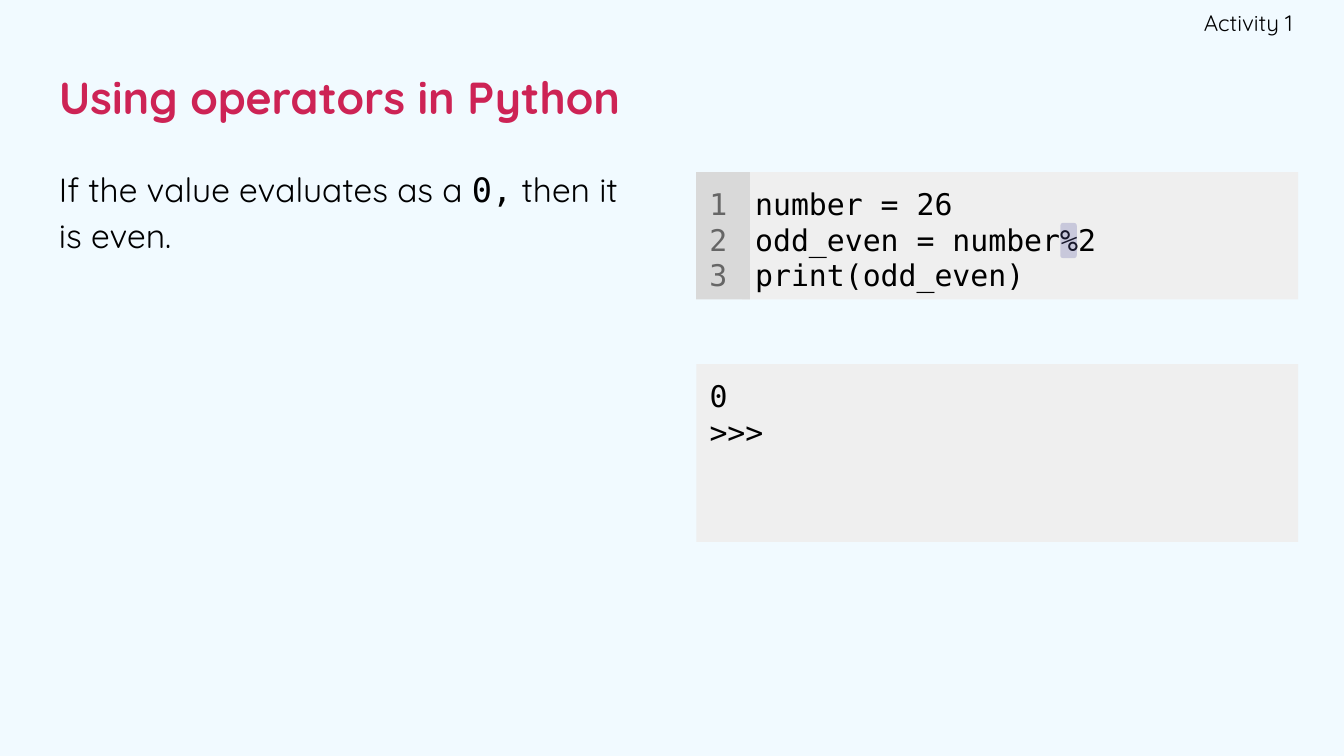
from lxml.etree import SubElement
from pptx import Presentation
from pptx.dml.color import RGBColor
from pptx.enum.shapes import MSO_SHAPE
from pptx.enum.text import MSO_ANCHOR, PP_ALIGN
from pptx.oxml.ns import qn
from pptx.util import Pt

PALE_BLUE = RGBColor(0xF1, 0xFA, 0xFF)
CRIMSON = RGBColor(0xCD, 0x23, 0x55)
BLACK = RGBColor(0x00, 0x00, 0x00)
PANEL_GREY = RGBColor(0xEF, 0xEF, 0xEF)
GUTTER_GREY = RGBColor(0xD9, 0xD9, 0xD9)
NUMBER_GREY = RGBColor(0x66, 0x66, 0x66)
VIOLET = RGBColor(0x5B, 0x5B, 0xA5)

PROSE_FONT = "Quicksand"
CODE_FONT = "DejaVu Sans Mono"
INSET = 7.2
MARGIN = 24.5
CODE_LEFT = 373
CODE_WIDTH = 322.5


def style_run(run, font_name, size, color, bold=False):
    """Set the font of one run."""
    run.font.name = font_name
    run.font.size = Pt(size)
    run.font.color.rgb = color
    run.font.bold = bold


def set_frame(frame, anchor=MSO_ANCHOR.TOP, right_inset=INSET):
    """Wrap a text frame and set its insets and anchor."""
    frame.word_wrap = True
    frame.vertical_anchor = anchor
    frame.margin_left = frame.margin_top = frame.margin_bottom = Pt(INSET)
    frame.margin_right = Pt(right_inset)


def add_prose(slide, box, pieces, size, color=BLACK, bold=False,
              anchor=MSO_ANCHOR.TOP, align=PP_ALIGN.LEFT, right_inset=INSET):
    """Add one paragraph made of (text, font) pieces and return it."""
    frame = slide.shapes.add_textbox(*map(Pt, box)).text_frame
    set_frame(frame, anchor, right_inset)
    paragraph = frame.paragraphs[0]
    paragraph.alignment = align
    for text, font_name in pieces:
        run = paragraph.add_run()
        run.text = text
        style_run(run, font_name, size, color, bold)
    return paragraph


def add_block(slide, box, fill, preset=MSO_SHAPE.RECTANGLE):
    """Add a plain filled shape without line or shadow."""
    block = slide.shapes.add_shape(preset, *map(Pt, box))
    block.shadow.inherit = False
    block.fill.solid()
    block.fill.fore_color.rgb = fill
    block.line.fill.background()
    return block


def add_code_panel(slide, box, lines, fill=PANEL_GREY, color=BLACK):
    """Add a panel of monospaced lines."""
    frame = add_block(slide, box, fill).text_frame
    set_frame(frame)
    frame.text = "\n".join(lines)
    for paragraph in frame.paragraphs:
        paragraph.alignment = PP_ALIGN.LEFT
        for run in paragraph.runs:
            style_run(run, CODE_FONT, 16, color)


def add_highlight(slide, box):
    """Add a translucent rounded marker."""
    marker = add_block(slide, box, VIOLET, MSO_SHAPE.ROUNDED_RECTANGLE)
    marker.adjustments[0] = 0.17
    tint = marker.fill._xPr.find(qn("a:solidFill"))[0]
    SubElement(tint, qn("a:alpha"), val="26000")


def add_listing(slide, box, lines):
    """Add code lines with a gutter of line numbers and mark the operator."""
    left, top, width, height = box
    gutter_width, code_offset = 28.8, 24.5
    add_code_panel(slide, (left + code_offset, top, width - code_offset, height), lines)
    numbers = [str(number) for number in range(1, len(lines) + 1)]
    add_code_panel(slide, (left, top, gutter_width, height), numbers,
                   GUTTER_GREY, NUMBER_GREY)
    add_highlight(slide, (left + 195.1, top + 27.2, 8.8, 18.9))


def add_header(slide, box):
    """Add the activity label and the title below it."""
    left, top, width, height = box
    label_height = 24.5
    add_prose(slide, (left, top + label_height, width, height - label_height),
              [("Using operators in Python", PROSE_FONT)], 24, CRIMSON, True,
              MSO_ANCHOR.MIDDLE)
    add_prose(slide, (left + 514, top, 154, label_height),
              [("Activity 1", PROSE_FONT)], 12, anchor=MSO_ANCHOR.MIDDLE,
              align=PP_ALIGN.RIGHT, right_inset=0)


def add_explanation(slide, box):
    """Add the explanatory sentence."""
    sentence = add_prose(slide, box, [("If the value evaluates as a ", PROSE_FONT),
                                      ("0,", CODE_FONT),
                                      (" then it is even.", PROSE_FONT)], 18)
    sentence.line_spacing = 1.15
    sentence.space_after = Pt(16)


def main():
    """Build and save the slide."""
    deck = Presentation()
    deck.slide_width, deck.slide_height = Pt(720), Pt(405)
    slide = deck.slides.add_slide(deck.slide_layouts[6])
    slide.background.fill.solid()
    slide.background.fill.fore_color.rgb = PALE_BLUE
    add_header(slide, (MARGIN, 0, 671, 79.2))
    add_explanation(slide, (MARGIN, 79.9, CODE_WIDTH, 288))
    add_listing(slide, (CODE_LEFT, 92.2, CODE_WIDTH, 68.2),
                ["number = 26", "odd_even = number%2", "print(odd_even)"])
    add_code_panel(slide, (CODE_LEFT, 195.1, CODE_WIDTH, 95.2), ["0", ">>>"])
    deck.save("out.pptx")


if __name__ == "__main__":
    main()
